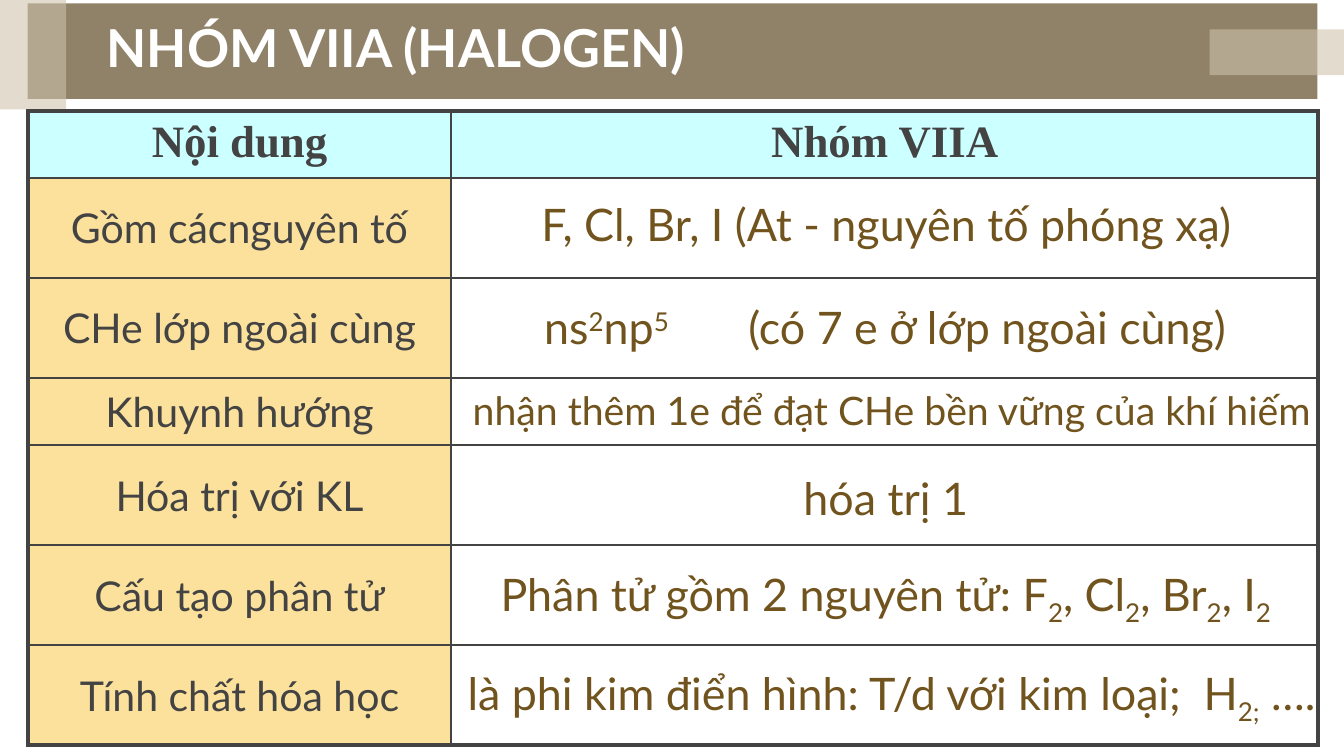
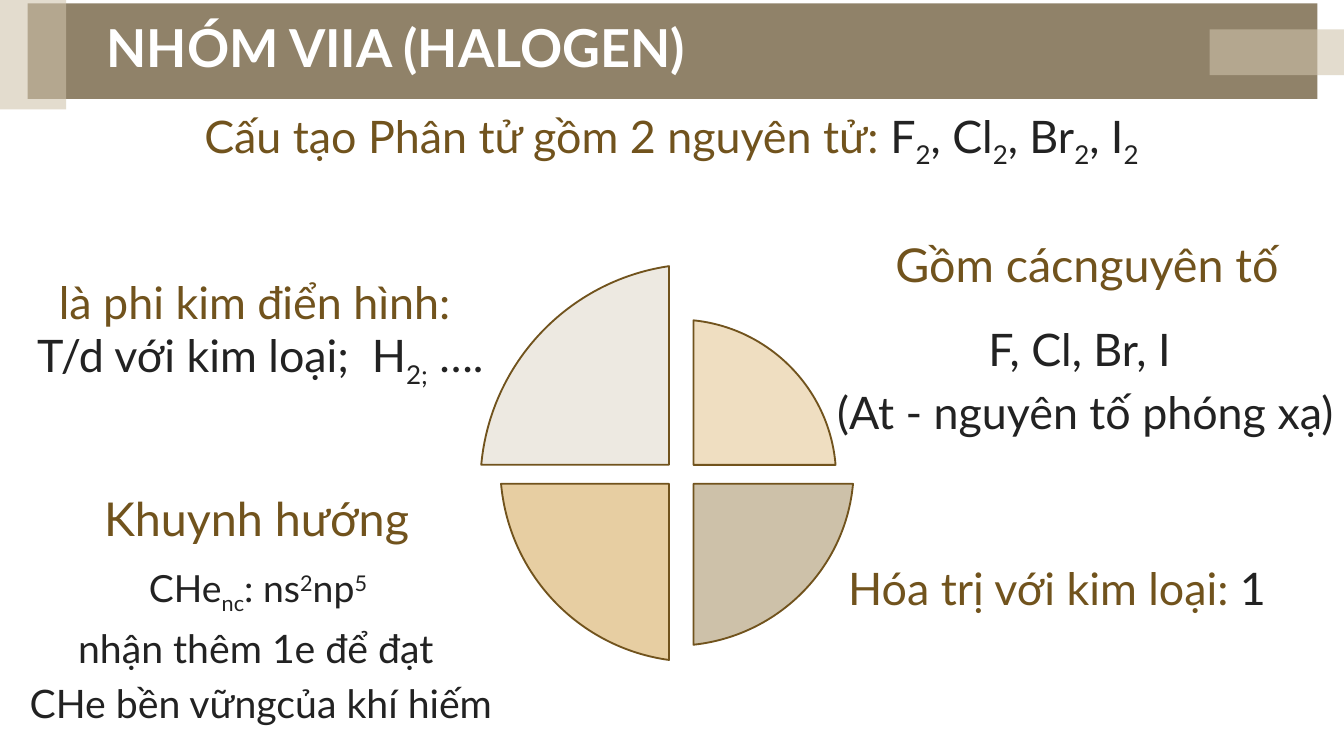
from lxml import etree
from pptx import Presentation
from pptx.dml.color import RGBColor
from pptx.enum import shapes, text
from pptx.oxml import ns
from pptx.util import Pt

# Shared look
BAND, VEIL = "908269", "CFC3AC"
BROWN, BLACK, GREY, WHITE = "71531D", "222222", "434343", "FFFFFF"
HEADER_FILL, LABEL_FILL = "CCFFFF", "FCE19C"
TITLE = "NHÓM VIIA (HALOGEN)"
CENTER, LEFT, JUSTIFY = (text.PP_ALIGN.CENTER, text.PP_ALIGN.LEFT,
                         text.PP_ALIGN.JUSTIFY)
MIDDLE, TOP = text.MSO_ANCHOR.MIDDLE, text.MSO_ANCHOR.TOP


def rgb(value):
    return RGBColor.from_string(value)


# Pieces of text: a string, or a string with its own format
def sub(content, **style):
    return content, {"baseline": -25, **style}


def sup(content, **style):
    return content, {"baseline": 30, **style}


def wide_space(extra, **style):
    return " ", {"spacing": extra, **style}


def molecules(**style):
    pieces = []
    for index, symbol in enumerate(("F", "Cl", "Br", "I")):
        pieces.append(((", " if index else "") + symbol, style))
        pieces.append(sub("2", **style))
    return pieces


def metal_reaction(lead="", **style):
    return [(lead + "T/d với kim loại;", style), wide_space(6, **style),
            ("H", style), sub("2;", **style), (" ….", style)]


def add_run(paragraph, content, size=24, color=BROWN, font="Lato", bold=False,
            baseline=0, spacing=0):
    run = paragraph.add_run()
    run.text = content
    run.font.size, run.font.name, run.font.bold = Pt(size), font, bold
    run.font.color.rgb = rgb(color)
    properties = run._r.get_or_add_rPr()
    if baseline:
        properties.set("baseline", str(baseline * 1000))
    if spacing:
        properties.set("spc", str(round(spacing * 100)))


def write(paragraph, pieces, align=CENTER, before=0, **style):
    paragraph.alignment = align
    paragraph.space_before = Pt(before)
    for piece in [pieces] if isinstance(pieces, str) else pieces:
        content, own = (piece, {}) if isinstance(piece, str) else piece
        add_run(paragraph, content, **{**style, **own})


def add_text(slide, box, paragraphs, wrap=False, anchor=MIDDLE, **style):
    frame = slide.shapes.add_textbox(*map(Pt, box)).text_frame
    frame.word_wrap = wrap
    frame.auto_size = text.MSO_AUTO_SIZE.NONE
    frame.vertical_anchor = anchor
    for index, pieces in enumerate(paragraphs):
        paragraph = frame.add_paragraph() if index else frame.paragraphs[0]
        write(paragraph, pieces, **style)


def paint(shape, color, opacity=100, line=None):
    shape.shadow.inherit = False
    shape.fill.solid()
    shape.fill.fore_color.rgb = rgb(color)
    if opacity < 100:
        tint = shape._element.spPr.find(ns.qn("a:solidFill"))[0]
        etree.SubElement(tint, ns.qn("a:alpha"), val=str(opacity * 1000))
    if line:
        shape.line.color.rgb = rgb(line)
        shape.line.width = Pt(1)
    else:
        shape.line.fill.background()


def add_rectangle(slide, box, color, opacity=100):
    rectangle = slide.shapes.add_shape(shapes.MSO_SHAPE.RECTANGLE, *map(Pt, box))
    paint(rectangle, color, opacity)


def add_sector(slide, corner, curve, color):
    """Sector from its corner along a cubic curve of four points."""
    builder = slide.shapes.build_freeform(*map(Pt, corner))
    builder.add_line_segments([tuple(map(Pt, point)) for point in curve], close=True)
    sector = builder.convert_to_shape()
    # Turn the last three line segments into one curve
    segments = list(sector._element.iter(ns.qn("a:lnTo")))[1:4]
    bend = etree.Element(ns.qn("a:cubicBezTo"))
    segments[0].addprevious(bend)
    for segment in segments:
        bend.append(segment[0])
        segment.getparent().remove(segment)
    paint(sector, color, 60, BROWN)


def set_borders(cell, widths):
    properties = cell._tc.get_or_add_tcPr()
    for index, (side, width) in enumerate(zip("LRTB", widths)):
        line = etree.Element(ns.qn("a:ln" + side), w=str(Pt(width)),
                             cap="flat", cmpd="sng")
        fill = etree.SubElement(line, ns.qn("a:solidFill"))
        etree.SubElement(fill, ns.qn("a:srgbClr"), val=GREY)
        etree.SubElement(line, ns.qn("a:prstDash"), val="solid")
        properties.insert(index, line)


def add_property_table(slide, labels, heights):
    rows = len(heights)
    table = slide.shapes.add_table(rows, 2, Pt(14.9), Pt(59.3), Pt(691.2),
                                   Pt(sum(heights))).table
    table.first_row = table.horz_banding = False
    for column, width in zip(table.columns, (226.8, 464.4)):
        column.width = Pt(width)
    for row, height in enumerate(heights):
        table.rows[row].height = Pt(height)
        for column in (0, 1):
            cell = table.cell(row, column)
            if row == 0 or column == 0:
                cell.fill.solid()
                cell.fill.fore_color.rgb = rgb(LABEL_FILL if row else HEADER_FILL)
            else:
                cell.fill.background()
            outer = (column == 0, column == 1, row == 0, row == rows - 1)
            set_borders(cell, [2.25 if edge else 1 for edge in outer])
    for column, heading in enumerate(("Nội dung", "Nhóm VIIA")):
        write(table.cell(0, column).text_frame.paragraphs[0], heading,
              color=GREY, font="Times New Roman", bold=True)
    for row, label in enumerate(labels, 1):
        cell = table.cell(row, 0)
        cell.vertical_anchor = MIDDLE
        write(cell.text_frame.paragraphs[0], label, size=22, color=GREY)


def add_titled_slide(presentation):
    slide = presentation.slides.add_slide(presentation.slide_layouts[6])
    add_rectangle(slide, (14.8, 1.8, 691, 51.2), BAND)
    add_rectangle(slide, (-14.4, -13.6, 49.8, 72.2), VEIL, 58)
    add_rectangle(slide, (648, 15.8, 205, 24.5), VEIL, 58)
    add_text(slide, (50.1, 8, 556.6, 34), [TITLE], wrap=True, align=JUSTIFY,
             size=28, color=WHITE, bold=True)
    return slide


def build_table_slide(presentation):
    slide = add_titled_slide(presentation)
    short, tall = 36, 53.6
    labels = ("Gồm cácnguyên tố", "CHe lớp ngoài cùng", "Khuynh hướng",
              "Hóa trị với KL", "Cấu tạo phân tử", "Tính chất hóa học")
    add_property_table(slide, labels,
                       (short, tall, tall, short, tall, tall, tall))
    # Answers laid over the right column: left, top, width, height
    answers = (
        ((244, 92, 461.5, 55.5), "F, Cl, Br, I (At - nguyên tố phóng xạ)", {}),
        ((243.4, 147.6, 461.5, 54.8),
         ["ns", sup("2"), "np", sup("5"), wide_space(36.4),
          "(có 7 e ở lớp ngoài cùng)"], {}),
        ((246.2, 203.4, 458.6, 32.4),
         "nhận thêm 1e để đạt CHe bền vững của khí hiếm",
         {"size": 21, "align": LEFT}),
        ((244, 242, 461, 49), "hóa trị 1", {}),
        ((244, 295.2, 461, 49),
         ["Phân tử gồm 2 nguyên tử: ", *molecules()], {}),
        ((243.4, 348.8, 462, 48.2),
         metal_reaction("là phi kim điển hình: "), {"align": LEFT}),
    )
    for box, pieces, style in answers:
        add_text(slide, box, [pieces], **style)


def build_summary_slide(presentation):
    slide = add_titled_slide(presentation)
    left, right, upper, lower = 358.4, 371.5, 249, 259.2

    # Molecules
    add_text(slide, (96.2, 50, 527, 49),
             [["Cấu tạo Phân tử gồm 2 nguyên tử: ", *molecules(color=BLACK)]])

    # Chemical character
    add_text(slide, (8.8, 145.4, 261.4, 64.8),
             ["là phi kim điển hình: ", metal_reaction(color=BLACK)])
    add_sector(slide, (left, upper), ((left, 142.6), (304.6, 150.5),
                                      (262.8, 194.4), (257.8, upper)), "E2DBCD")

    # Valence
    add_text(slide, (427, 290.2, 278.6, 49),
             [["Hóa trị với kim loại: ", ("1", {"color": BLACK})]])
    add_sector(slide, (right, lower), ((457, lower), (452.9, 304.6),
                                       (416.9, 340.6), (right, 345.4)), "AC9870")

    # Elements
    add_text(slide, (423, 173, 316.8, 61.2),
             ["F, Cl, Br, I ", "(At - nguyên tố phóng xạ)"],
             color=BLACK, before=4.8)
    add_sector(slide, (right, upper), ((right, 171.6), (411.8, 175.7),
                                       (444.2, 208), (447.6, upper)), "E5C998")
    add_text(slide, (444.8, 123, 275, 37.4), ["Gồm cácnguyên tố"],
             wrap=True, anchor=TOP, size=25)

    # Tendency
    small = {"size": 20}
    configuration = [("CHe", small), sub("nc", **small), (": ns", small),
                     sup("2", **small), ("np", small), sup("5", **small),
                     wide_space(3, baseline=30, **small)]
    add_text(slide, (14.1, 303, 251.3, 85.7),
             [configuration, "nhận thêm 1e để đạt ", "CHe bền vữngcủa khí hiếm"],
             size=21, color=BLACK, before=4.2)
    add_sector(slide, (left, lower), ((left, 353.6), (310.3, 347),
                                      (272.9, 308.2), (268.4, lower)), "D8AE65")
    add_text(slide, (34.4, 258.9, 206, 37.4), ["Khuynh hướng"],
             wrap=True, anchor=TOP, size=25)


def main():
    presentation = Presentation()
    presentation.slide_width, presentation.slide_height = Pt(720), Pt(405)
    build_table_slide(presentation)
    build_summary_slide(presentation)
    presentation.save("out.pptx")


if __name__ == "__main__":
    main()
